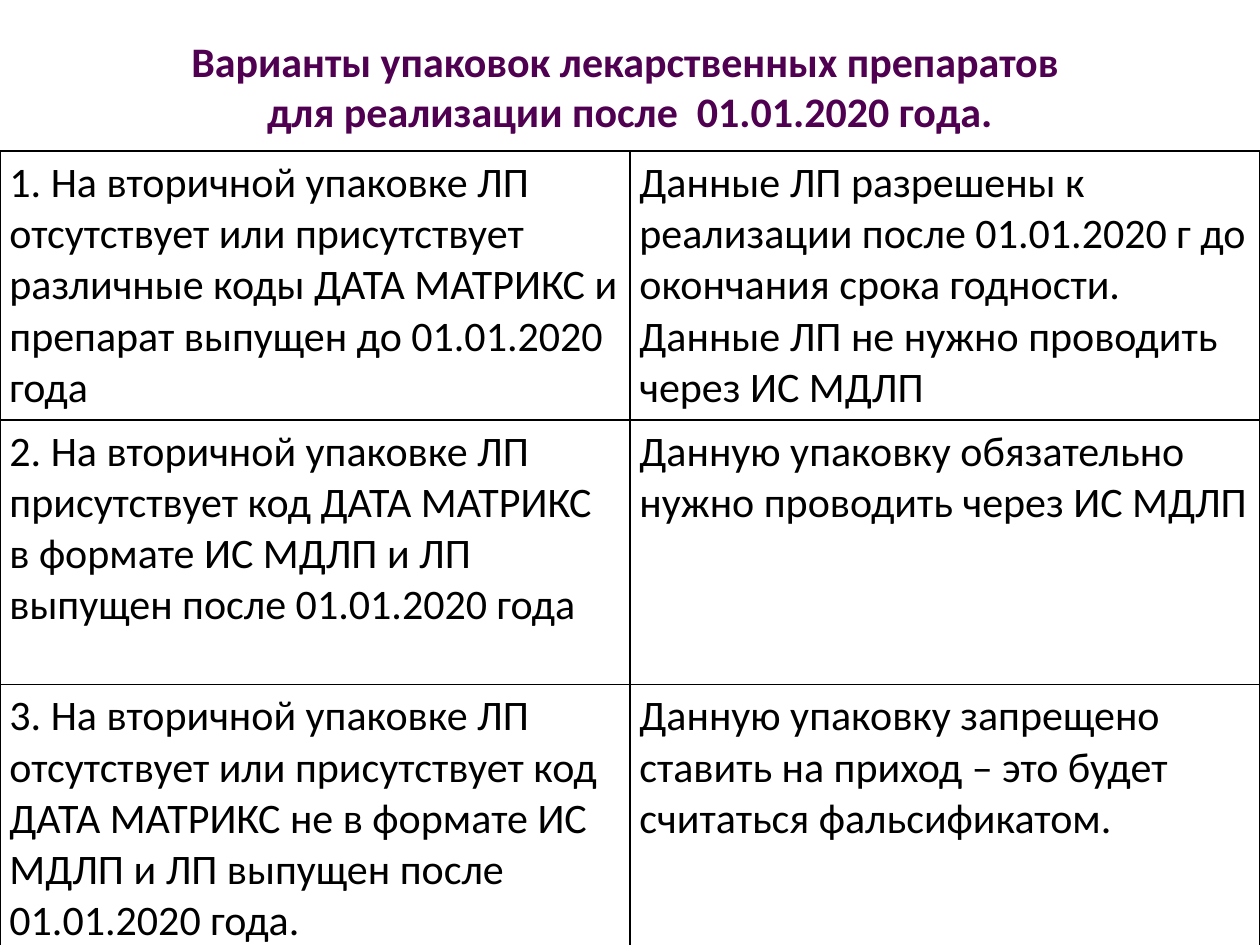
from lxml.etree import SubElement
from pptx import Presentation
from pptx.dml.color import RGBColor
from pptx.enum.text import MSO_ANCHOR, MSO_AUTO_SIZE, PP_ALIGN
from pptx.oxml.ns import qn
from pptx.util import Pt


def color(value):
    return RGBColor.from_string(value)


def write(frame, lines, text_color, bold, align):
    for index, line in enumerate(lines):
        paragraph = frame.paragraphs[0] if index == 0 else frame.add_paragraph()
        paragraph.alignment = align
        run = paragraph.add_run()
        run.text = line
        run.font.name = "Calibri"
        run.font.size = Pt(24)
        run.font.bold = bold
        run.font.color.rgb = color(text_color)


presentation = Presentation()
presentation.slide_width, presentation.slide_height = Pt(720), Pt(540)
slide = presentation.slides.add_slide(presentation.slide_layouts[5])

title = slide.shapes.title
title.left, title.top, title.width, title.height = Pt(28), Pt(16.5), Pt(664), Pt(65.5)
title.text_frame.auto_size = MSO_AUTO_SIZE.NONE
title.text_frame.vertical_anchor = MSO_ANCHOR.TOP
title_lines = [
    "Варианты упаковок лекарственных препаратов ",
    "для реализации после  01.01.2020 года.",
]
write(title.text_frame, title_lines, "500050", True, PP_ALIGN.CENTER)

package_rules = [
    (
        ["1. На вторичной упаковке ЛП отсутствует или присутствует различные коды "
         "ДАТА МАТРИКС и препарат выпущен до 01.01.2020 года"],
        ["Данные ЛП разрешены к реализации после 01.01.2020 г до окончания срока годности.",
         "Данные ЛП не нужно проводить через ИС МДЛП"],
    ),
    (
        ["2. На вторичной упаковке ЛП присутствует код ДАТА МАТРИКС в формате "
         "ИС МДЛП и ЛП выпущен после 01.01.2020 года"],
        ["Данную упаковку обязательно нужно проводить через ИС МДЛП"],
    ),
    (
        ["3. На вторичной упаковке ЛП отсутствует или присутствует код "
         "ДАТА МАТРИКС не в формате ИС МДЛП и ЛП выпущен после 01.01.2020 года."],
        ["Данную упаковку запрещено ставить на приход – это будет считаться фальсификатом."],
    ),
]

table_top = 86.4
table = slide.shapes.add_table(
    len(package_rules), 2, Pt(0), Pt(table_top), Pt(720), Pt(540 - table_top)
).table
table.first_row = False
table.horz_banding = False

for row, rule in zip(table.rows, package_rules):
    for cell, lines in zip(row.cells, rule):
        cell.margin_left = cell.margin_right = Pt(5.4)
        cell.margin_top = cell.margin_bottom = Pt(3.6)
        write(cell.text_frame, lines, "000000", False, PP_ALIGN.LEFT)
        properties = cell._tc.get_or_add_tcPr()
        for side in ("lnL", "lnR", "lnT", "lnB"):
            border = SubElement(properties, qn(f"a:{side}"), w=str(Pt(1)))
            fill = SubElement(border, qn("a:solidFill"))
            SubElement(fill, qn("a:srgbClr"), val="000000")
        cell.fill.solid()
        cell.fill.fore_color.rgb = color("FFFFFF")

presentation.save("out.pptx")
